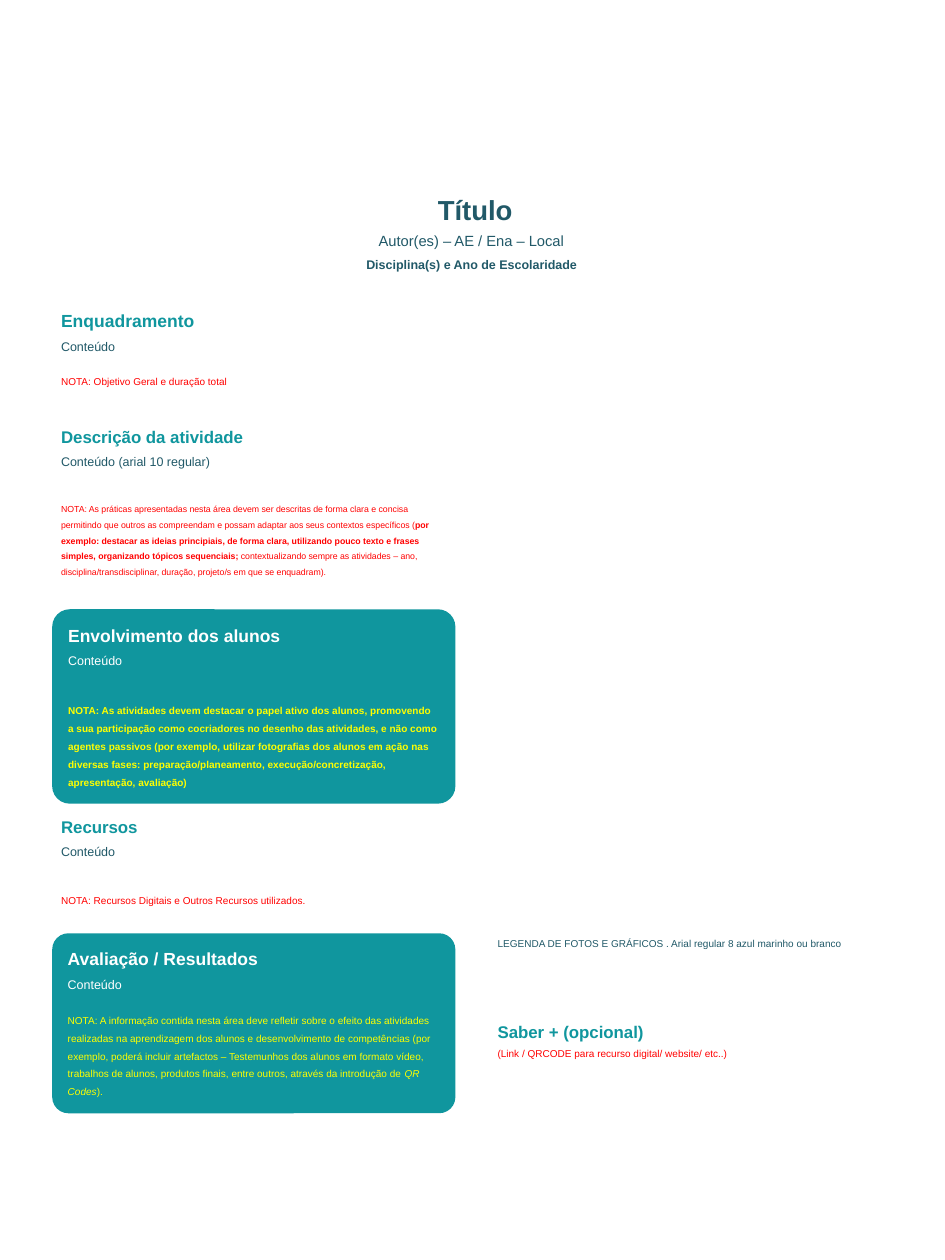
from pptx import Presentation
from pptx.dml.color import RGBColor
from pptx.enum import shapes, text
from pptx.util import Inches, Pt

HUES = {"navy": "215968", "teal": "10969E", "red": "FF0000",
        "white": "FFFFFF", "yellow": "FFFF00"}
LEFT, RIGHT, WIDE = 0.58, 5.43, 4.48


def style(para, size, hue, bold=False):
    font = para.font
    font.name, font.size, font.bold = "Arial", Pt(size), bold
    font.color.rgb = RGBColor.from_string(HUES[hue])


def place(shape, box):
    shape.left, shape.top, shape.width, shape.height = map(Inches, box)


def add_box(slide, box):
    frame = slide.shapes.add_textbox(*map(Inches, box)).text_frame
    frame.word_wrap = True
    return frame


def add_panel(slide, box):
    panel = slide.shapes.add_shape(
        shapes.MSO_SHAPE.ROUNDED_RECTANGLE, *map(Inches, box))
    panel.adjustments[0] = 0.09
    panel.shadow.inherit = False
    panel.fill.solid()
    panel.fill.fore_color.rgb = RGBColor.from_string(HUES["teal"])
    panel.line.fill.background()
    frame = panel.text_frame
    frame.word_wrap = True
    frame.vertical_anchor = text.MSO_ANCHOR.MIDDLE
    frame.margin_top = 0
    frame.margin_left = frame.margin_right = frame.margin_bottom = Inches(0.12)
    return frame


def fill_text(frame, rows):
    for i, (runs, size, hue, bold, gap) in enumerate(rows):
        para = frame.paragraphs[0] if i == 0 else frame.add_paragraph()
        para.alignment = text.PP_ALIGN.LEFT
        para.line_spacing = 1.5
        if gap:
            para.space_before = Pt(gap)
        style(para, size, hue, bold)
        for words, mark in runs:
            run = para.add_run()
            run.text = words
            if mark == "bold":
                run.font.bold = True
            elif mark == "italic":
                run.font.italic = True


def add_part(slide, box, head, note, size=13.5, body="Conteúdo", gap=0,
             note_size=8, panel=False, strong=False):
    frame = (add_panel if panel else add_box)(slide, box)
    tones = ("white", "white", "yellow") if panel else ("teal", "navy", "red")
    rows = [([(head, "")], size, tones[0], True, 0)]
    if body:
        rows.append(([(body, "")], 10, tones[1], False, 0))
    rows.append((note, note_size, tones[2], strong, gap))
    fill_text(frame, rows)


def add_head(slide):
    title = slide.shapes.title
    place(title, (0.9, 2.1, 8.76, 0.47))
    lines = [
        (title.text_frame, "Título", 22, True),
        (add_box(slide, (0.88, 2.53, 8.76, 0.3)),
         "Autor(es) – AE / Ena – Local ", 11.8, False),
        (add_box(slide, (0.86, 2.81, 8.76, 0.27)),
         "Disciplina(s) e Ano de Escolaridade", 10, True),
    ]
    for frame, words, size, bold in lines:
        frame.word_wrap = True
        frame.auto_size = text.MSO_AUTO_SIZE.NONE
        frame.vertical_anchor = text.MSO_ANCHOR.TOP
        para = frame.paragraphs[0]
        para.text = words
        para.alignment = text.PP_ALIGN.CENTER
        style(para, size, "navy", bold)


def add_left(slide):
    add_part(slide, (LEFT, 3.28, WIDE, 1.08), "Enquadramento",
             [("NOTA: Objetivo Geral e duração total", "")], size=14, gap=13)
    add_part(slide, (LEFT, 4.58, WIDE, 1.92), "Descrição da atividade", [
        ("NOTA: As práticas apresentadas nesta área devem ser descritas de "
         "forma clara e concisa permitindo que outros as compreendam e possam "
         "adaptar aos seus contextos específicos (", ""),
        ("por exemplo: destacar as ideias principiais, de forma clara, "
         "utilizando pouco texto e frases simples, organizando tópicos "
         "sequenciais; ", "bold"),
        ("contextualizando sempre as atividades – ano, "
         "disciplina/transdisciplinar, duração, projeto/s em que se "
         "enquadram).", "")],
        body="Conteúdo (arial 10 regular)", gap=23.3, note_size=7)
    add_part(slide, (LEFT, 6.77, WIDE, 2.16), "Envolvimento dos alunos", [
        ("NOTA: As atividades devem destacar o papel ativo dos alunos, "
         "promovendo a sua participação como cocriadores no desenho das "
         "atividades, e não como agentes passivos (por exemplo, utilizar "
         "fotografias dos alunos em ação nas diversas fases: "
         "preparação/planeamento, execução/concretização, apresentação, "
         "avaliação)", "")], size=14, gap=24, panel=True, strong=True)
    add_part(slide, (LEFT, 8.91, WIDE, 1.2), "Recursos",
             [("NOTA: Recursos Digitais e Outros Recursos utilizados.", "")],
             gap=23.3)
    add_part(slide, (LEFT, 10.37, WIDE, 2), "Avaliação / Resultados", [
        ("NOTA: A informação contida nesta área deve refletir sobre o efeito "
         "das atividades realizadas na aprendizagem dos alunos e "
         "desenvolvimento de competências (por exemplo, poderá incluir "
         "artefactos – Testemunhos dos alunos em formato vídeo, trabalhos de "
         "alunos, produtos finais, entre outros, através da introdução de ",
         ""),
        ("QR Codes", "italic"), (").", "")], size=14, gap=13, panel=True)


def add_right(slide):
    para = add_box(slide, (RIGHT, 10.37, WIDE, 0.24)).paragraphs[0]
    para.text = ("LEGENDA DE FOTOS E GRÁFICOS . "
                 "Arial regular 8 azul marinho ou branco")
    style(para, 8, "navy")
    add_part(slide, (RIGHT, 11.19, WIDE, 0.61), "Saber + (opcional)",
             [("(Link / QRCODE para recurso digital/ website/ etc..)", "")],
             body="")


def main():
    deck = Presentation()
    deck.slide_width, deck.slide_height = Inches(10.5), Inches(14)
    slide = deck.slides.add_slide(deck.slide_layouts[5])
    add_head(slide)
    add_left(slide)
    add_right(slide)
    deck.save("out.pptx")


if __name__ == "__main__":
    main()
